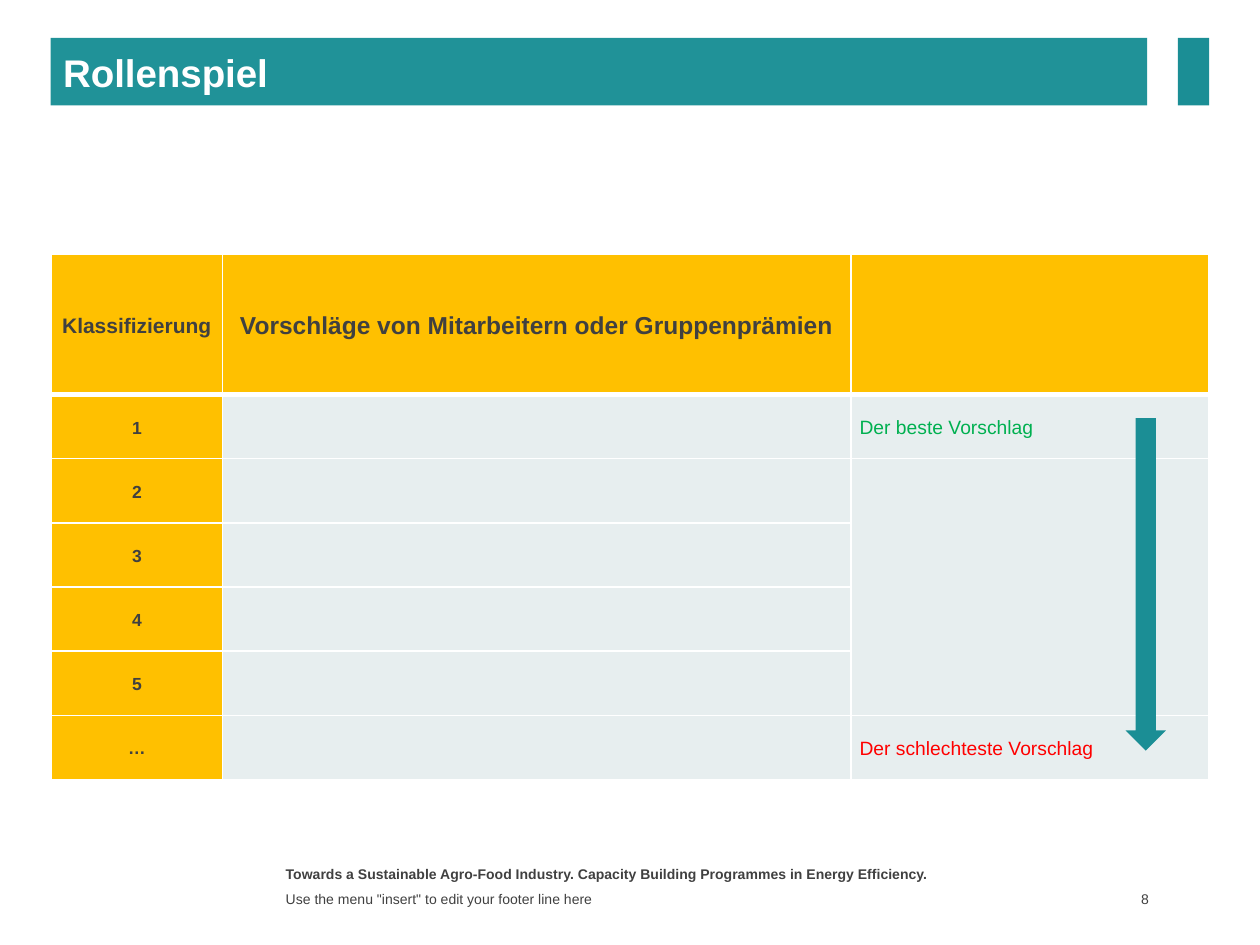
from dataclasses import dataclass

import pptx
import pptx.dml.color
import pptx.enum.shapes
import pptx.enum.text
import pptx.oxml.ns
import pptx.util
from lxml import etree

Pt = pptx.util.Pt
ALIGN = pptx.enum.text.PP_ALIGN
ANCHOR = pptx.enum.text.MSO_ANCHOR
SHAPE = pptx.enum.shapes.MSO_SHAPE


@dataclass(frozen=True)
class Theme:
    font: str = "Arial"
    text: str = "404040"
    white: str = "FFFFFF"
    banner: str = "209298"
    accent: str = "1B8E95"
    header: str = "FFC000"
    body: str = "E7EEEF"
    best: str = "00B050"
    worst: str = "FF0000"
    title_size: int = 22
    heading_size: int = 14
    rank_heading_size: int = 12
    verdict_size: int = 11
    rank_size: int = 10
    footer_size: int = 8


THEME = Theme()
RANKS = ["1", "2", "3", "4", "5", "…"]


def rgb(color):
    return pptx.dml.color.RGBColor.from_string(color)


def write(text_frame, text, size, color=THEME.text, bold=False, align=ALIGN.LEFT):
    text_frame.text = text
    paragraph = text_frame.paragraphs[0]
    paragraph.alignment = align
    font = paragraph.runs[0].font
    font.name = THEME.font
    font.size = Pt(size)
    font.bold = bold
    font.color.rgb = rgb(color)
    return paragraph


def add_block(slide, kind, box, color):
    shape = slide.shapes.add_shape(kind, *map(Pt, box))
    shape.shadow.inherit = False
    shape.fill.solid()
    shape.fill.fore_color.rgb = rgb(color)
    shape.line.fill.background()
    return shape


def add_title_bar(slide, box):
    left, top, width, height = box
    tab_width, gap = 18, 17.5
    banner_width = width - tab_width - gap
    banner = add_block(slide, SHAPE.RECTANGLE, (left, top, banner_width, height), THEME.banner)
    banner.text_frame.vertical_anchor = ANCHOR.MIDDLE
    write(banner.text_frame, "Rollenspiel", THEME.title_size, THEME.white, bold=True)
    tab_left = left + width - tab_width
    add_block(slide, SHAPE.RECTANGLE, (tab_left, top, tab_width, height), THEME.accent)


def set_border(cell, side, weight):
    properties = cell._tc.get_or_add_tcPr()
    line = etree.SubElement(properties, pptx.oxml.ns.qn(f"a:ln{side}"), w=str(Pt(weight)))
    fill = etree.SubElement(line, pptx.oxml.ns.qn("a:solidFill"))
    etree.SubElement(fill, pptx.oxml.ns.qn("a:srgbClr"), val=THEME.white)


def style_cell(cell, color, top_weight, bottom_weight):
    for side, weight in zip("LRTB", (1, 1, top_weight, bottom_weight)):
        set_border(cell, side, weight)
    cell.fill.solid()
    cell.fill.fore_color.rgb = rgb(color)
    cell.vertical_anchor = ANCHOR.MIDDLE
    cell.margin_left = cell.margin_right = Pt(5)
    cell.margin_top = cell.margin_bottom = 0


def write_cell(cell, *args, **options):
    write(cell.text_frame, *args, **options).line_spacing = 1.15


def add_ranking(slide, box):
    """Table of ranked proposals with an arrow from best to worst."""
    left, top, width, height = box
    header_height, rank_width, verdict_width = 80, 98, 204.5
    row_height = (height - header_height) / len(RANKS)
    table = slide.shapes.add_table(len(RANKS) + 1, 3, *map(Pt, box)).table
    widths = (rank_width, width - rank_width - verdict_width, verdict_width)
    for column, column_width in zip(table.columns, widths):
        column.width = Pt(column_width)
    for index, row in enumerate(table.rows):
        row.height = Pt(row_height if index else header_height)
        for column_index, cell in enumerate(row.cells):
            is_heading = index == 0 or column_index == 0
            style_cell(cell, THEME.header if is_heading else THEME.body,
                       3 if index == 1 else 1, 3 if index == 0 else 1)

    heading = {"bold": True, "align": ALIGN.CENTER}
    write_cell(table.cell(0, 0), "Klassifizierung", THEME.rank_heading_size, **heading)
    write_cell(table.cell(0, 1), "Vorschläge von Mitarbeitern oder Gruppenprämien",
               THEME.heading_size, **heading)
    for index, rank in enumerate(RANKS, start=1):
        write_cell(table.cell(index, 0), rank, THEME.rank_size, **heading)
    last = len(RANKS)
    write_cell(table.cell(1, 2), "Der beste Vorschlag", THEME.verdict_size, THEME.best)
    write_cell(table.cell(last, 2), "Der schlechteste Vorschlag", THEME.verdict_size, THEME.worst)
    table.cell(2, 2).merge(table.cell(last - 1, 2))

    arrow_box = (left + width - 47.5, top + header_height + 13.5, 23, 190)
    add_block(slide, SHAPE.DOWN_ARROW, arrow_box, THEME.accent)


def add_label(slide, box, text, anchor=ANCHOR.MIDDLE, **options):
    text_frame = slide.shapes.add_textbox(*map(Pt, box)).text_frame
    text_frame.word_wrap = True
    text_frame.vertical_anchor = anchor
    write(text_frame, text, THEME.footer_size, **options)
    return text_frame


def add_footer(slide, box):
    left, top, width, height = box
    text_width, number_width, line_height = 396, 40, 14
    second_top = top + height - line_height
    add_label(slide, (left, top, text_width, line_height),
              "Towards a Sustainable Agro-Food Industry. "
              "Capacity Building Programmes in Energy Efficiency.",
              anchor=ANCHOR.TOP, bold=True)
    add_label(slide, (left, second_top, text_width, line_height),
              'Use the menu "insert" to edit your footer line here')
    number = add_label(slide, (left + width - number_width, second_top, number_width, line_height),
                       "8", align=ALIGN.RIGHT)
    number.margin_right = Pt(3)


def main():
    presentation = pptx.Presentation()
    presentation.slide_width, presentation.slide_height = Pt(720), Pt(540)
    slide = presentation.slides.add_slide(presentation.slide_layouts[6])
    add_footer(slide, (156.2, 491, 503.3, 29.7))
    add_ranking(slide, (29.2, 145.4, 661.5, 300.2))
    add_title_bar(slide, (29, 21.6, 662, 38.7))
    presentation.save("out.pptx")


if __name__ == "__main__":
    main()
